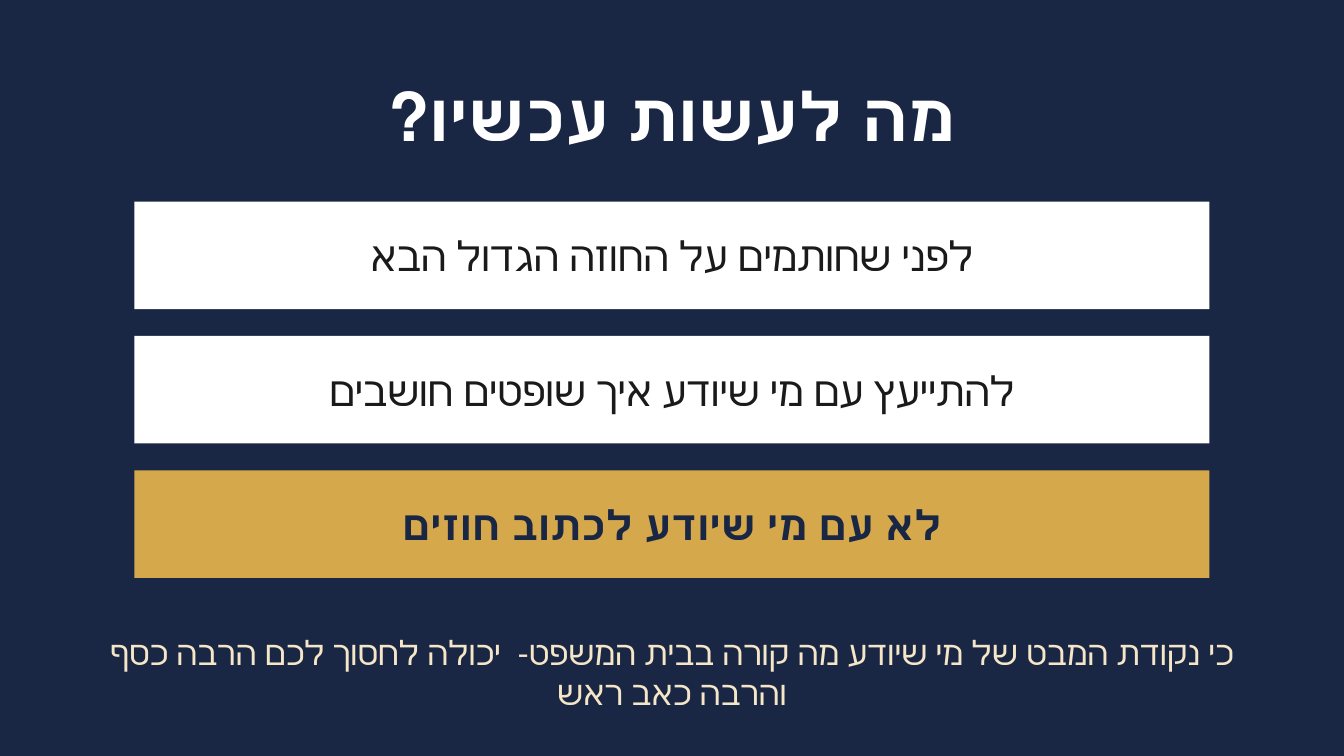
from pptx import Presentation
from pptx.dml.color import RGBColor
from pptx.enum.shapes import MSO_SHAPE
from pptx.enum.text import MSO_ANCHOR, PP_ALIGN
from pptx.util import Inches, Pt

RECT = MSO_SHAPE.RECTANGLE
MIDDLE = MSO_ANCHOR.MIDDLE
CENTER = PP_ALIGN.CENTER

WIDE = 10
HIGH = WIDE * 9 / 16
FONT = "Arial"
NAVY, GOLD, CREAM = "1A2744", "D4A84B", "F5E6C8"
WHITE, INK = "FFFFFF", "1A1A1A"

STEPS = [
    ("לפני שחותמים על החוזה הגדול הבא", WHITE, INK, False),
    ("להתייעץ עם מי שיודע איך שופטים חושבים", WHITE, INK, False),
    ("לא עם מי שיודע לכתוב חוזים", GOLD, NAVY, True),
]


def rgb(code):
    return RGBColor.from_string(code)


def place(box):
    return [Inches(part) for part in box]


def add_text(slide, box, text, size=22, color=INK, bold=False):
    """Add centred right-to-left text in the middle of the box."""
    frame = slide.shapes.add_textbox(*place(box)).text_frame
    frame.word_wrap = True
    frame.vertical_anchor = MIDDLE
    para = frame.paragraphs[0]
    para.alignment = CENTER
    para._p.get_or_add_pPr().set("rtl", "1")
    run = para.add_run()
    run.text = text
    font = run.font
    font.name, font.size, font.bold = FONT, Pt(size), bold
    font.color.rgb = rgb(color)


def add_bar(slide, box, text, fill, color, bold):
    left, top, width, height = box
    bar = slide.shapes.add_shape(RECT, *place(box))
    bar.shadow.inherit = False
    bar.fill.solid()
    bar.fill.fore_color.rgb = rgb(fill)
    bar.line.fill.background()
    pad_x, pad_y = 0.2, 0.15
    inner = (left + pad_x, top + pad_y, width - 2 * pad_x, height - 2 * pad_y)
    add_text(slide, inner, text, color=color, bold=bold)


def add_steps(slide, box, gap=0.2):
    """Stack the bars in equal rows that fill the box."""
    left, top, width, height = box
    pitch = (height + gap) / len(STEPS)
    for row, step in enumerate(STEPS):
        add_bar(slide, (left, top + row * pitch, width, pitch - gap), *step)


def main():
    deck = Presentation()
    deck.slide_width, deck.slide_height = Inches(WIDE), Inches(HIGH)
    slide = deck.slides.add_slide(deck.slide_layouts[6])
    slide.background.fill.solid()
    slide.background.fill.fore_color.rgb = rgb(NAVY)

    edge, inset = 0.05 * WIDE, 0.1 * WIDE
    span = WIDE - 2 * edge
    add_text(slide, (edge, 0.5, span, 0.7), "מה לעשות עכשיו?",
             size=36, color=WHITE, bold=True)
    add_steps(slide, (inset, 1.5, WIDE - 2 * inset, 2.8))
    add_text(slide, (edge, 4.6, span, 0.8),
             "כי נקודת המבט של מי שיודע מה קורה בבית המשפט-  "
             "יכולה לחסוך לכם הרבה כסף והרבה כאב ראש",
             size=18, color=CREAM)
    deck.save("out.pptx")


if __name__ == "__main__":
    main()
